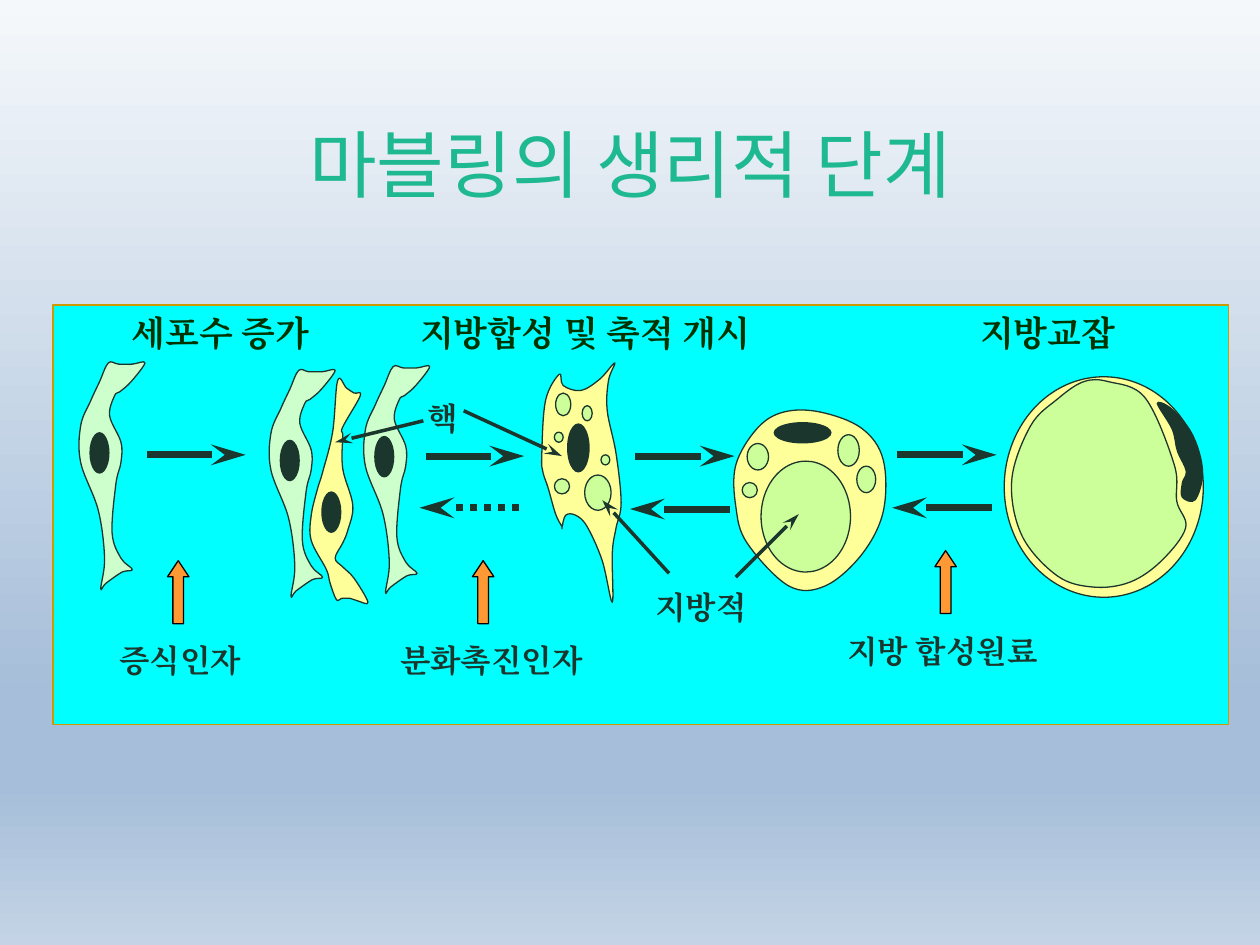
from lxml.etree import SubElement as Sub
from pptx import Presentation
from pptx.dml.color import RGBColor as RGB
from pptx.enum.dml import MSO_LINE as Dash
from pptx.enum.shapes import MSO_CONNECTOR as Conn, MSO_SHAPE as Kind
from pptx.enum.text import MSO_ANCHOR as Anchor, MSO_AUTO_SIZE as Auto, PP_ALIGN as Align
from pptx.oxml.ns import qn
from pptx.util import Inches, Pt

DARK = RGB(0x1B, 0x37, 0x2D)
FOREST = RGB(0x00, 0x33, 0x00)
TEAL = RGB(0x1F, 0xB9, 0x91)
CYAN = RGB(0x00, 0xFF, 0xFF)
GOLD = RGB(0xCC, 0x99, 0x00)
CREAM = RGB(0xFF, 0xFF, 0x99)
MINT = RGB(0xCC, 0xFF, 0xCC)
LIME = RGB(0xCC, 0xFF, 0x99)
AMBER = RGB(0xFF, 0x99, 0x33)
BLACK = RGB(0x00, 0x00, 0x00)

deck = Presentation()
deck.slide_width, deck.slide_height = Inches(10), Inches(7.5)
slide = deck.slides.add_slide(deck.slide_layouts[5])

back = slide.background.fill
back.gradient()
back.gradient_angle = 270
stops = slide.element.find(".//" + qn("a:gsLst"))
for stop in list(stops):
    stops.remove(stop)
for pos, tint in [(0, "F5F8FB"), (74, "A6BED9"), (83, "A6BED9"), (100, "C4D4E6")]:
    stop = Sub(stops, qn("a:gs"), pos=str(pos * 1000))
    Sub(stop, qn("a:srgbClr"), val=tint)

title = slide.shapes.title
title.left, title.top = Inches(0.75), Inches(0.67)
title.width, title.height = Inches(8.5), Inches(1.25)
title.text_frame.vertical_anchor = Anchor.MIDDLE
title.text_frame.text = "마블링의 생리적 단계"
head = title.text_frame.paragraphs[0]
head.alignment = Align.CENTER
head.font.size = Pt(42)
head.font.name = "Noto Sans CJK KR"
head.font.color.rgb = TEAL

art = slide.shapes.add_group_shape().shapes


def paint(shape, fill, edge=DARK):
    shape.shadow.inherit = False
    shape.fill.solid()
    shape.fill.fore_color.rgb = fill
    if edge is None:
        shape.line.fill.background()
    else:
        shape.line.color.rgb = edge
        shape.line.width = Pt(0.75)


def curve(knots, fill, dx=0, dy=0):
    dots = [(Inches(x + dx), Inches(y + dy)) for x, y in knots]
    path = art.build_freeform(*dots[0])
    path.add_line_segments(dots[1:] + dots[:1], close=True)
    shape = path.convert_to_shape()
    paint(shape, fill, None if fill == DARK else DARK)
    left, top = min(x for x, y in dots), min(y for x, y in dots)
    count = len(dots)
    for i, step in enumerate(shape._element.findall(".//" + qn("a:lnTo"))):
        a, b, c, d = [dots[(i + k) % count] for k in (-1, 0, 1, 2)]
        pull = [q + (r - p) / 6 for p, q, r in zip(a, b, c)]
        push = [q - (r - p) / 6 for p, q, r in zip(b, c, d)]
        step.tag = qn("a:cubicBezTo")
        step.remove(step[0])
        for x, y in (pull, push, c):
            Sub(step, qn("a:pt"), x=str(round(x - left)), y=str(round(y - top)))


panel = art.add_shape(Kind.RECTANGLE, Inches(0.42), Inches(2.42), Inches(9.33), Inches(3.33))
paint(panel, CYAN, GOLD)
mature = art.add_shape(Kind.OVAL, Inches(7.97), Inches(2.99), Inches(1.58), Inches(1.75))
paint(mature, CREAM)

stem = [
    (0.86, 2.88), (0.79, 3.03), (0.72, 3.18), (0.64, 3.38), (0.64, 3.67), (0.78, 4.05),
    (0.83, 4.43), (0.8, 4.67), (0.84, 4.63), (0.97, 4.54), (1.05, 4.52), (0.96, 4.43),
    (0.89, 4.23), (0.92, 3.84), (0.96, 3.67), (0.96, 3.51), (0.87, 3.3), (0.91, 3.14),
    (0.95, 3.11), (1.04, 3.03), (1.15, 2.88), (1.05, 2.89), (0.94, 2.89),
]
for dx, dy in [(0, 0), (1.51, 0.06), (2.26, 0.03)]:
    curve(stem, MINT, dx, dy)

thin = [
    (2.68, 3.02), (2.64, 3.43), (2.56, 3.75), (2.52, 3.88), (2.47, 4.09), (2.47, 4.29),
    (2.59, 4.52), (2.62, 4.63), (2.67, 4.76), (2.71, 4.75), (2.78, 4.75), (2.84, 4.77),
    (2.92, 4.78), (2.81, 4.59), (2.72, 4.5), (2.66, 4.43), (2.72, 4.31), (2.76, 4.21),
    (2.8, 4.01), (2.72, 3.72), (2.72, 3.46), (2.72, 3.39), (2.86, 3.14), (2.81, 3.12),
    (2.75, 3.08),
]
star = [
    (4.44, 2.97), (4.33, 3.18), (4.3, 3.62), (4.31, 3.75), (4.35, 3.87), (4.41, 4.08),
    (4.46, 4.18), (4.46, 4.19), (4.49, 4.09), (4.57, 4.09), (4.66, 4.18), (4.78, 4.45),
    (4.86, 4.78), (4.86, 4.39), (4.89, 4.19), (4.93, 3.99), (4.89, 3.6), (4.82, 3.26),
    (4.83, 3.02), (4.88, 2.88), (4.76, 3.01), (4.61, 3.1), (4.47, 3.06),
]
young = [
    (6.22, 3.27), (6.01, 3.4), (5.84, 3.69), (5.84, 4.02), (5.93, 4.31), (6.26, 4.65),
    (6.55, 4.65), (6.84, 4.4), (7.01, 4.06), (7.01, 3.65), (6.84, 3.4), (6.51, 3.27),
]
fat = [
    (8.8, 3.03), (8.6, 3.03), (8.39, 3.17), (8.18, 3.38), (8.03, 3.81), (8.11, 4.25),
    (8.39, 4.57), (8.68, 4.66), (8.97, 4.62), (9.22, 4.45), (9.41, 4.19), (9.34, 3.98),
    (9.32, 3.69), (9.09, 3.16),
]
core = [
    (9.18, 3.2), (9.3, 3.24), (9.47, 3.45), (9.55, 3.74), (9.49, 3.97), (9.38, 3.95),
    (9.38, 3.83), (9.41, 3.74), (9.34, 3.58), (9.3, 3.41),
]
for knots, fill in [(thin, CREAM), (star, CREAM), (young, CREAM), (fat, LIME), (core, DARK)]:
    curve(knots, fill)

nuclei = [
    (0.71, 3.43, 0.16, 0.33), (2.22, 3.49, 0.16, 0.33), (2.97, 3.46, 0.16, 0.33),
    (2.55, 3.9, 0.16, 0.33), (4.5, 3.36, 0.18, 0.39), (6.14, 3.35, 0.46, 0.17),
]
drops = [
    (4.64, 3.77, 0.21, 0.28), (4.4, 3.8, 0.12, 0.12), (4.41, 3.12, 0.12, 0.18),
    (4.62, 3.22, 0.08, 0.12), (4.77, 3.61, 0.07, 0.08), (4.4, 3.43, 0.07, 0.08),
    (6.04, 3.66, 0.71, 0.88), (6.8, 3.7, 0.15, 0.21), (6.65, 3.45, 0.17, 0.25),
    (5.93, 3.52, 0.17, 0.21), (5.89, 3.83, 0.12, 0.12),
]
for boxes, fill, edge in [(nuclei, DARK, None), (drops, LIME, DARK)]:
    for box in boxes:
        paint(art.add_shape(Kind.OVAL, *map(Inches, box)), fill, edge)

arrows = [
    (3.68, 3.26, 4.46, 3.62, 2), (3.36, 3.34, 2.66, 3.51, 2),
    (5.31, 4.55, 4.78, 3.97, 2), (5.84, 4.58, 6.34, 4.08, 2),
    (1.17, 3.61, 1.95, 3.61, 4), (3.38, 3.62, 4.16, 3.62, 4),
    (5.04, 3.62, 5.83, 3.62, 4), (7.12, 3.61, 7.91, 3.61, 4),
    (7.87, 4.03, 7.08, 4.03, 4), (5.79, 4.04, 5, 4.04, 4),
    (4.12, 4.03, 3.33, 4.03, 4),
]
for *ends, width in arrows:
    arrow = art.add_connector(Conn.STRAIGHT, *map(Inches, ends))
    arrow.line.color.rgb = DARK
    arrow.line.width = Pt(width)
    if ends == [4.12, 4.03, 3.33, 4.03]:
        arrow.line.dash_style = Dash.ROUND_DOT
    Sub(arrow.line._ln, qn("a:tailEnd"), type="stealth", w="med", len="lg")
    Sub(arrow._element.spPr, qn("a:effectLst"))

for x, y in [(1.33, 4.45), (3.75, 4.45), (7.42, 4.37)]:
    rise = art.add_shape(Kind.UP_ARROW, Inches(x), Inches(y), Inches(0.17), Inches(0.5))
    rise.adjustments[0], rise.adjustments[1] = 0.5, 0.75
    paint(rise, AMBER, BLACK)

labels = [
    ("세포수 증가", 0.92, 2.42, 1.66, 20), ("지방합성 및 축적 개시", 3.19, 2.42, 2.91, 20),
    ("지방교잡", 7.66, 2.42, 1.31, 20), ("지방적", 5.09, 4.62, 0.95, 18),
    ("증식인자", 0.83, 5.04, 1.2, 18), ("분화촉진인자", 3.05, 5.04, 1.7, 18),
    ("지방 합성원료", 6.6, 4.97, 1.76, 18), ("핵", 3.29, 3.12, 0.45, 18),
]
for text, x, y, width, size in labels:
    high = 0.43 if size == 20 else 0.4
    box = art.add_textbox(Inches(x), Inches(y), Inches(width), Inches(high))
    frame = box.text_frame
    frame.word_wrap = width in (1.66, 2.91)
    frame.auto_size = Auto.SHAPE_TO_FIT_TEXT
    frame.text = text
    para = frame.paragraphs[0]
    para.alignment = Align.CENTER
    para.font.size = Pt(size)
    para.font.name = "Times New Roman"
    para.font.bold = True
    para.font.color.rgb = FOREST if size == 20 else DARK
    Sub(para._p.pPr.find(qn("a:defRPr")), qn("a:ea"), typeface="Times New Roman")

deck.save("out.pptx")
